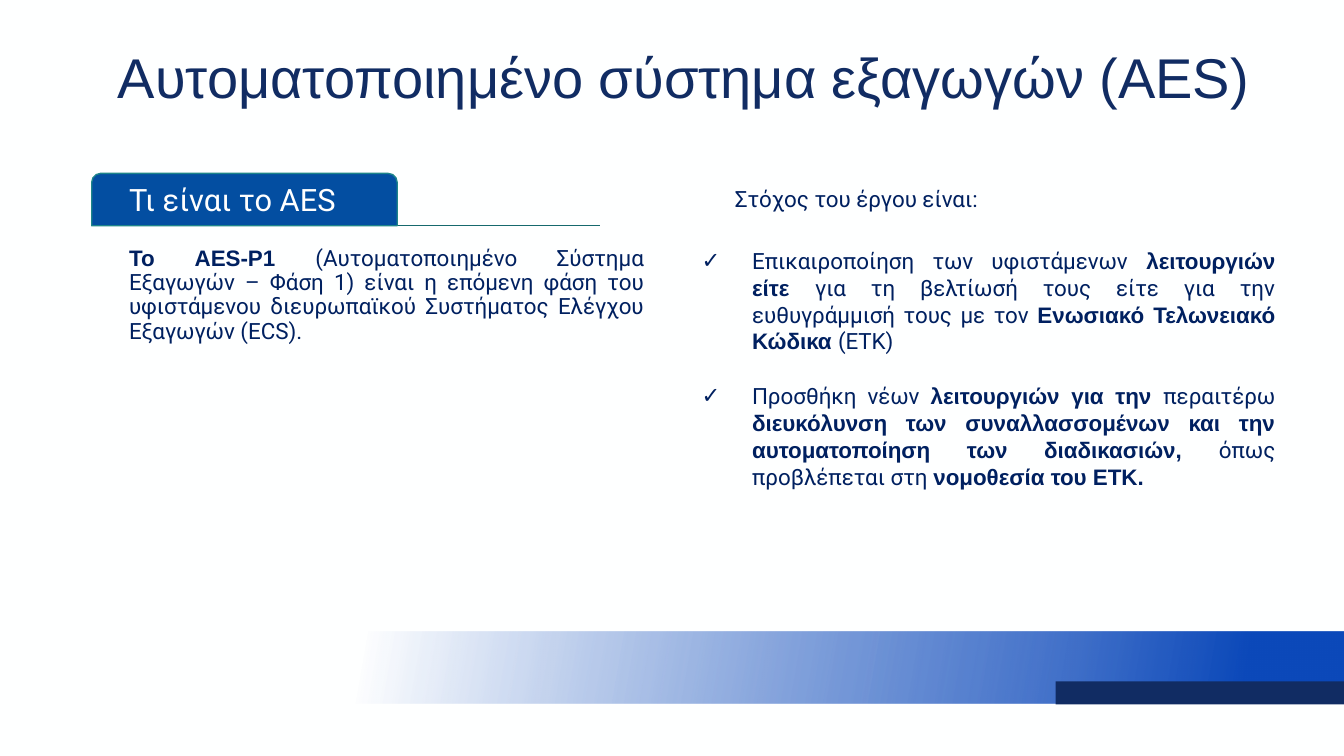
"""Build the slide that introduces the automated export system (AES)."""
import lxml.etree
import pptx
import pptx.dml.color
import pptx.enum.shapes
import pptx.enum.text
import pptx.oxml
import pptx.oxml.ns
import pptx.util

Inches = pptx.util.Inches
Pt = pptx.util.Pt
RGBColor = pptx.dml.color.RGBColor
Shape = pptx.enum.shapes.MSO_SHAPE
Align = pptx.enum.text.PP_ALIGN
Anchor = pptx.enum.text.MSO_ANCHOR
qn = pptx.oxml.ns.qn

PAPER = RGBColor(0xFE, 0xFF, 0xFF)
WHITE = RGBColor(0xFF, 0xFF, 0xFF)
NAVY = RGBColor(0x11, 0x2C, 0x63)
INK = RGBColor(0x00, 0x20, 0x60)
TAB_BLUE = RGBColor(0x03, 0x4E, 0xA1)
TAB_EDGE = RGBColor(0x1E, 0x85, 0x8A)
RULE = RGBColor(0x16, 0x69, 0x6D)
BAND_BLUE = RGBColor(0x0C, 0x49, 0xBA)
BAND_MID = RGBColor(0x32, 0x65, 0xC5)


class AesSlide:
    BODY, STRONG = "Roboto", "Arial"
    LINE_WIDTH = Pt(0.96)

    def __init__(self, deck):
        self.slide = deck.slides.add_slide(deck.slide_layouts[5])
        self.shapes = self.slide.shapes
        self.slide.background.fill.solid()
        self.slide.background.fill.fore_color.rgb = PAPER

    def block(self, preset, box, fill=None, edge=None):
        block = self.shapes.add_shape(preset, *map(Inches, box))
        block.shadow.inherit = False
        if fill is not None:
            block.fill.solid()
            block.fill.fore_color.rgb = fill
        if edge is None:
            block.line.fill.background()
        else:
            block.line.color.rgb = edge
            block.line.width = self.LINE_WIDTH
        return block

    def fading_band(self, box, rotation, angle, stops):
        band = self.block(Shape.RECTANGLE, box)
        band.rotation = rotation
        band.fill.gradient()
        band.fill.gradient_angle = 360 - angle
        stop_list = band.fill._xPr.find(qn("a:gradFill")).find(qn("a:gsLst"))
        for stop in list(stop_list):
            stop_list.remove(stop)
        for percent, colour, opacity in stops:
            stop = lxml.etree.SubElement(stop_list, qn("a:gs"), pos=str(percent * 1000))
            tint = lxml.etree.SubElement(stop, qn("a:srgbClr"), val=str(colour))
            lxml.etree.SubElement(tint, qn("a:alpha"), val=str(opacity * 1000))

    def rule(self, left, right, top):
        rule = self.shapes.add_connector(
            pptx.enum.shapes.MSO_CONNECTOR.STRAIGHT,
            Inches(left), Inches(top), Inches(right), Inches(top))
        rule.line.color.rgb = RULE
        rule.line.width = self.LINE_WIDTH
        lxml.etree.SubElement(rule._element.spPr, qn("a:effectLst"))

    def frame(self, holder, anchor=Anchor.TOP, inset_top=0.01):
        frame = holder.text_frame
        frame.word_wrap = True
        frame.auto_size = pptx.enum.text.MSO_AUTO_SIZE.NONE
        frame.vertical_anchor = anchor
        frame.margin_left = frame.margin_right = frame.margin_bottom = 0
        frame.margin_top = Inches(inset_top)
        return frame

    def title(self, box, text):
        heading = self.shapes.title
        heading.left, heading.top, heading.width, heading.height = map(Inches, box)
        frame = self.frame(heading, Anchor.MIDDLE)
        frame.text = text
        frame.paragraphs[0].alignment = Align.LEFT
        self.style(frame.paragraphs[0].runs[0], 40, self.STRONG, NAVY)

    def text_box(self, box, **options):
        return self.frame(self.shapes.add_textbox(*map(Inches, box)), **options)

    def style(self, run, size, font, colour, bold=False):
        run.font.size = Pt(size)
        run.font.name = font
        run.font.color.rgb = colour
        run.font.bold = bold

    def paragraph(self, paragraph, pieces, size=16, colour=INK, indent=0.0, hanging=0.0,
                  bullet=None, align=Align.LEFT, before=0, spacing=None):
        properties = paragraph._p.get_or_add_pPr()
        properties.set("marL", str(Inches(indent)))
        properties.set("indent", str(-Inches(hanging)))
        if bullet:
            lxml.etree.SubElement(properties, qn("a:buFont"), typeface=self.STRONG)
            lxml.etree.SubElement(properties, qn("a:buChar"), char=bullet)
        paragraph.alignment = align
        paragraph.space_before = Pt(before)
        if spacing:
            paragraph.line_spacing = spacing
        for text, bold in pieces:
            run = paragraph.add_run()
            run.text = text
            self.style(run, size, self.STRONG if bold else self.BODY, colour, bold)


def main():
    deck = pptx.Presentation()
    deck.slide_width, deck.slide_height = Inches(13.33), Inches(7.5)
    aes = AesSlide(deck)

    aes.fading_band((7.87, 1.52, 0.71, 10.21), 90, 280,
                    [(5, BAND_BLUE, 0), (72, BAND_MID, 91), (90, BAND_BLUE, 100)])
    aes.block(Shape.RECTANGLE, (10.47, 6.76, 2.86, 0.23), NAVY)
    aes.title((1.17, 0.41, 11.68, 0.69), "Αυτοματοποιημένο σύστημα εξαγωγών (AES)")

    aes.rule(0.91, 5.95, 2.24)
    tab = aes.block(Shape.ROUND_2_SAME_RECTANGLE, (0.91, 1.72, 3.03, 0.52), TAB_BLUE, TAB_EDGE)
    tab.adjustments[0] = 0.17

    definition = aes.text_box((0.81, 1.77, 5.58, 1.97), inset_top=0.02)
    aes.paragraph(definition.paragraphs[0], [("Τι είναι το AES", False)],
                  size=22, colour=WHITE, indent=0.47)
    aes.paragraph(definition.add_paragraph(), [
        ("Το AES-P1 ", True),
        ("(Αυτοματοποιημένο Σύστημα Εξαγωγών – Φάση 1) είναι η επόμενη φάση του "
         "υφιστάμενου διευρωπαϊκού Συστήματος Ελέγχου Εξαγωγών (ECS).", False),
    ], indent=0.47, align=Align.JUSTIFY, before=21.4, spacing=0.9)

    purpose = aes.text_box((7.28, 1.44, 4.64, 0.66), anchor=Anchor.BOTTOM)
    aes.paragraph(purpose.paragraphs[0], [("Στόχος του έργου είναι:", False)], indent=0.01)

    update = [
        ("Επικαιροποίηση των υφιστάμενων ", False),
        ("λειτουργιών είτε ", True),
        ("για τη βελτίωσή τους είτε για την ευθυγράμμισή τους με τον ", False),
        ("Ενωσιακό Τελωνειακό Κώδικα ", True),
        ("(ΕΤΚ)", False),
    ]
    addition = [
        ("Προσθήκη νέων ", False),
        ("λειτουργιών για την ", True),
        ("περαιτέρω ", False),
        ("διευκόλυνση των συναλλασσομένων και την αυτοματοποίηση των διαδικασιών, ", True),
        ("όπως προβλέπεται στη ", False),
        ("νομοθεσία του ΕΤΚ.", True),
    ]
    goals = aes.text_box((6.95, 2.43, 5.7, 2.18), inset_top=0.02)
    goal_format = dict(indent=0.51, hanging=0.5, bullet="✓", align=Align.JUSTIFY)
    aes.paragraph(goals.paragraphs[0], update, **goal_format)
    aes.paragraph(goals.add_paragraph(), addition, before=20, **goal_format)

    deck.save("out.pptx")


if __name__ == "__main__":
    main()
